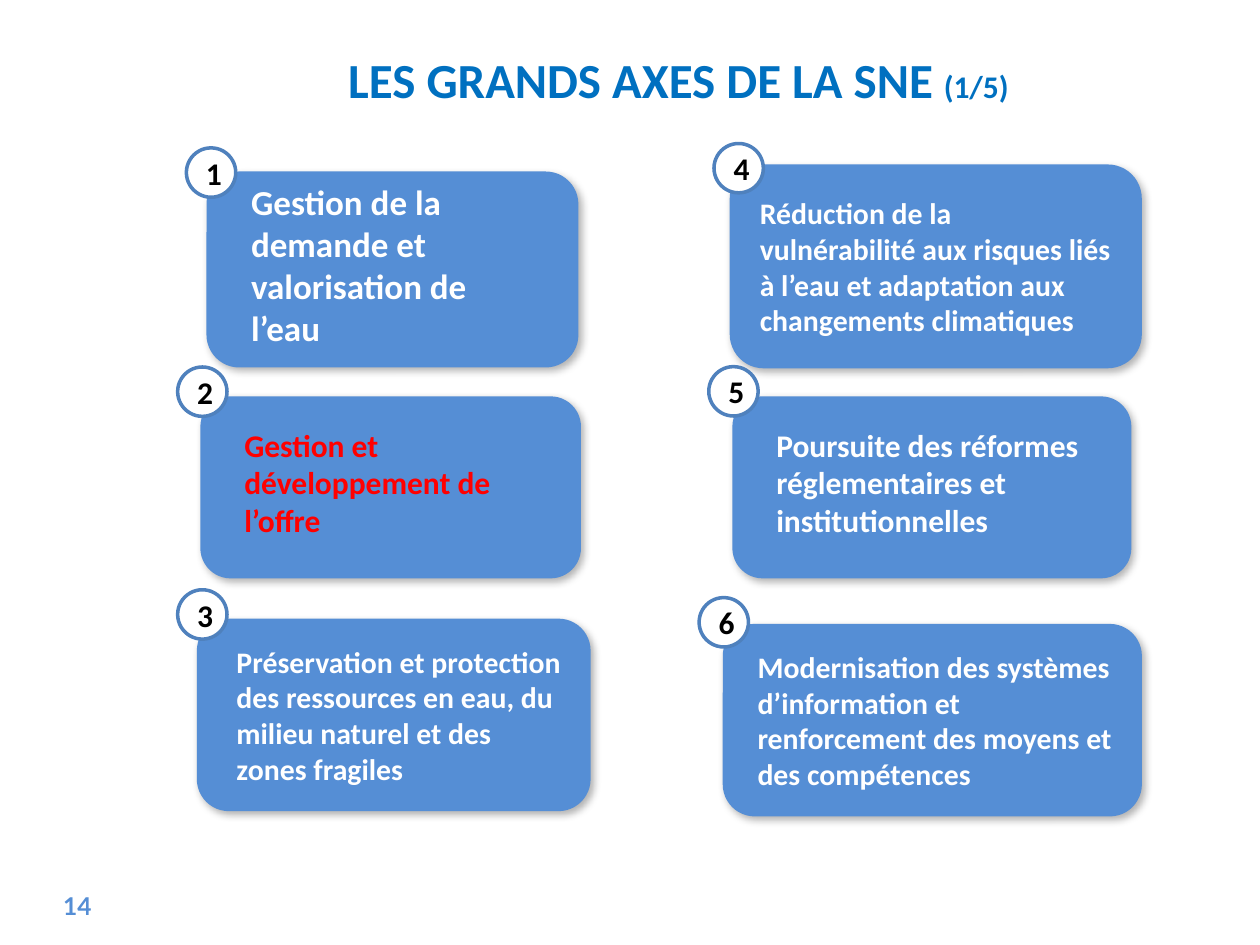
from lxml import etree
from pptx import Presentation
from pptx import util as u
from pptx.dml.color import RGBColor
from pptx.enum import shapes, text
from pptx.oxml.ns import qn

BLUE, WHITE, RED, BLACK = "558ED5", "FFFFFF", "FF0000", "000000"
RIM, TITLE_BLUE = "4F81BD", "0070C0"
BADGE_SIZE = 28.2

ROOMY = (20, 11.5, 14.5, 17.3)
AXES = [
    ("Gestion de la demande et valorisation de l’eau",
     (118, 98, 212.5, 112), (106.5, 84.5), ROOMY, 20, WHITE),
    ("Gestion et développement de l’offre",
     (114.5, 226.5, 217.5, 104), (101.5, 209.7), ROOMY, 18, RED),
    ("Préservation et protection des ressources en eau, du milieu naturel et des zones fragiles",
     (112.5, 353.5, 225, 110), (101.5, 337), (17.3, 8.6, 11.5, 8.6), 17, WHITE),
    ("Réduction de la vulnérabilité aux risques liés à l’eau et adaptation aux changements climatiques",
     (417, 94, 235.5, 116.5), (408, 82), (11.5, 11.5, 11.5, 11.5), 17, WHITE),
    ("Poursuite des réformes réglementaires et institutionnelles",
     (418.5, 226.5, 228, 104), (405, 209.5), ROOMY, 18, WHITE),
    ("Modernisation des systèmes d’information et renforcement des moyens et des compétences",
     (413, 356.5, 239.5, 110), (399.5, 341.5), (14.5, 8.6, 11.5, 8.6), 17, WHITE),
]


def color(value):
    return RGBColor.from_string(value)


def points(values):
    return [u.Pt(value) for value in values]


def style(paragraph, size, ink, align, face="Calibri"):
    paragraph.alignment = align
    font = paragraph.font
    font.name, font.size, font.bold = face, u.Pt(size), True
    font.color.rgb = color(ink)


def cast_shadow(card):
    effects = card._element.spPr.find(qn("a:effectLst"))
    shadow = etree.SubElement(
        effects, qn("a:outerShdw"), blurRad=str(u.Pt(4.5)), dist=str(u.Pt(2.6)),
        dir=str(53 * 60000), algn="ctr", rotWithShape="0")
    shade = etree.SubElement(shadow, qn("a:srgbClr"), val=BLACK)
    etree.SubElement(shade, qn("a:alpha"), val="30000")


def add_filled(slide, preset, box, fill, words, size, ink, align):
    figure = slide.shapes.add_shape(preset, *points(box))
    figure.shadow.inherit = False
    figure.fill.solid()
    figure.fill.fore_color.rgb = color(fill)
    frame = figure.text_frame
    frame.word_wrap = True
    frame.vertical_anchor = text.MSO_ANCHOR.MIDDLE
    frame.text = words
    style(frame.paragraphs[0], size, ink, align)
    return figure


def add_card(slide, words, box, insets, size, ink):
    card = add_filled(slide, shapes.MSO_SHAPE.ROUNDED_RECTANGLE, box, BLUE,
                      words, size, ink, text.PP_ALIGN.LEFT)
    card.line.fill.background()
    frame = card.text_frame
    (frame.margin_left, frame.margin_top,
     frame.margin_right, frame.margin_bottom) = points(insets)
    cast_shadow(card)


def add_badge(slide, number, corner):
    badge = add_filled(slide, shapes.MSO_SHAPE.OVAL, (*corner, BADGE_SIZE, BADGE_SIZE),
                       WHITE, str(number), 18, BLACK, text.PP_ALIGN.CENTER)
    badge.line.color.rgb = color(RIM)
    badge.line.width = u.Pt(2)


def add_title(slide):
    frame = slide.shapes.add_textbox(*points((189.5, 18, 396.5, 45.5))).text_frame
    frame.word_wrap = False
    heading = frame.paragraphs[0]
    style(heading, 28, TITLE_BLUE, text.PP_ALIGN.CENTER)
    heading.line_spacing = 1.2
    heading.add_run().text = "LES GRANDS AXES DE LA SNE "
    counter = heading.add_run()
    counter.text = "(1/5)"
    counter.font.size = u.Pt(18)


def add_page_number(slide):
    frame = slide.shapes.add_textbox(*points((25, 503.5, 34.5, 28.5))).text_frame
    frame.word_wrap = True
    frame.vertical_anchor = text.MSO_ANCHOR.MIDDLE
    frame.text = "14"
    style(frame.paragraphs[0], 14, BLUE, text.PP_ALIGN.RIGHT, "Lato")


def main():
    deck = Presentation()
    deck.slide_width, deck.slide_height = points((720, 540))
    slide = deck.slides.add_slide(deck.slide_layouts[6])
    for words, box, _, insets, size, ink in AXES:
        add_card(slide, words, box, insets, size, ink)
    for number, axis in enumerate(AXES, 1):
        add_badge(slide, number, axis[2])
    add_title(slide)
    add_page_number(slide)
    deck.save("out.pptx")


if __name__ == "__main__":
    main()
